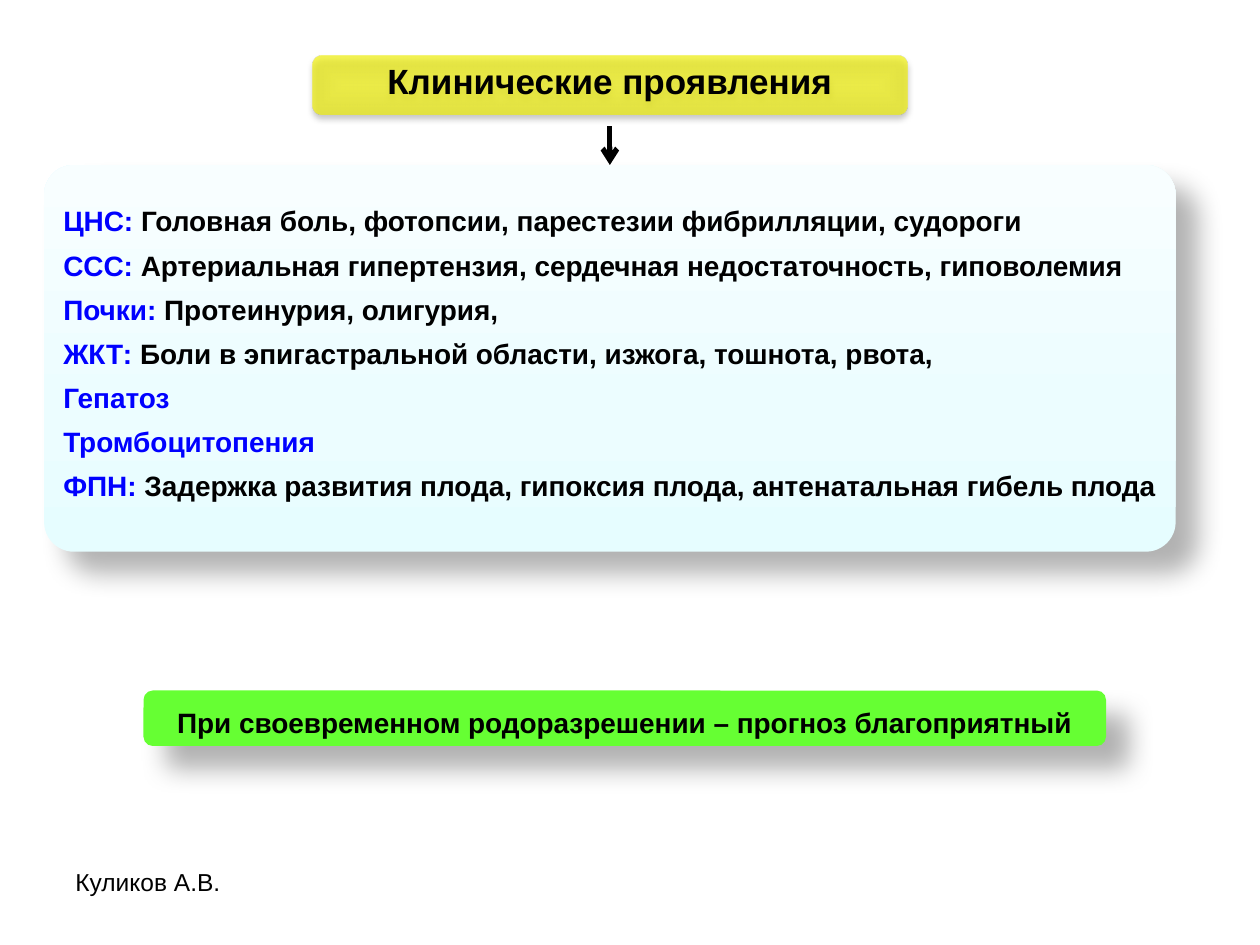
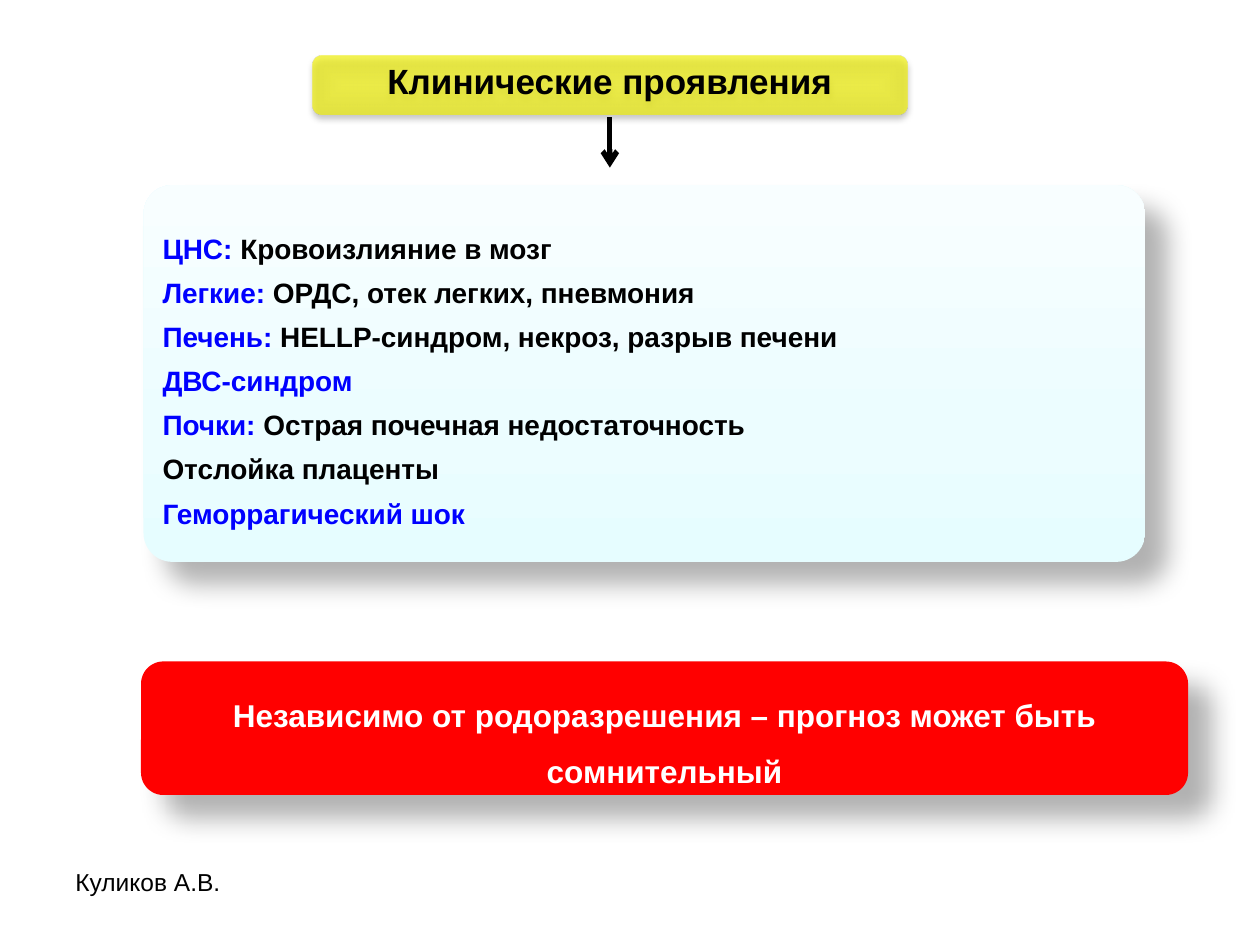
from lxml.etree import SubElement
from pptx import Presentation
from pptx.dml.color import RGBColor
from pptx.enum.shapes import MSO_CONNECTOR, MSO_SHAPE
from pptx.enum.text import MSO_ANCHOR, PP_ALIGN
from pptx.oxml.ns import qn
from pptx.util import Pt

BLACK = RGBColor(0x00, 0x00, 0x00)
WHITE = RGBColor(0xFF, 0xFF, 0xFF)
BLUE = RGBColor(0x00, 0x00, 0xFF)
GREEN = RGBColor(0x66, 0xFF, 0x33)
RED = RGBColor(0xFF, 0x00, 0x00)
YELLOW = RGBColor(0xFF, 0xFF, 0x00)
DARK_YELLOW = RGBColor(0xEF, 0xEF, 0x00)
ICE_DEEP = RGBColor(0xE6, 0xFD, 0xFF)
ICE_MIDDLE = RGBColor(0xEC, 0xFD, 0xFF)
ICE_PALE = RGBColor(0xF8, 0xFE, 0xFF)

FONT = "Arial"
CENTRE_X = 348.5  # shared axis of the title and the arrow

# Gradient stops: position %, colour, opacity %
TITLE_STOPS = [(0, YELLOW, 64), (100, DARK_YELLOW, 67)]
PANEL_STOPS = [(0, ICE_DEEP, 100), (35, ICE_MIDDLE, 100), (100, ICE_PALE, 100)]

# Shadows: opacity %, blur, distance, angle
TITLE_SHADOW = (32, 3.5, 2.2, 90)
DEEP_SHADOW = (30, 15, 18, 45)

# Panel lines: blue label, black findings
EARLY_SIGNS = [
    ("ЦНС:", " Головная боль, фотопсии, парестезии фибрилляции, судороги"),
    ("ССС:", " Артериальная гипертензия, сердечная недостаточность, гиповолемия"),
    ("Почки:", " Протеинурия, олигурия,"),
    ("ЖКТ:", " Боли в эпигастральной области, изжога, тошнота, рвота,"),
    ("Гепатоз", ""),
    ("Тромбоцитопения", ""),
    ("ФПН:", " Задержка развития плода, гипоксия плода, антенатальная гибель плода"),
]
LATE_SIGNS = [
    ("ЦНС:", " Кровоизлияние в мозг"),
    ("Легкие:", " ОРДС, отек легких, пневмония"),
    ("Печень:", " HELLP-синдром, некроз, разрыв печени"),
    ("ДВС-синдром", ""),
    ("Почки:", " Острая почечная недостаточность"),
    ("", "Отслойка плаценты"),
    ("Геморрагический шок", ""),
]


def set_all(target, values):
    for name, value in values.items():
        setattr(target, name, value)


def add_element(parent, tag, **attributes):
    return SubElement(parent, qn(tag), {key: str(value) for key, value in attributes.items()})


def add_colour(parent, colour, opacity):
    node = add_element(parent, "a:srgbClr", val=colour)
    if opacity < 100:
        add_element(node, "a:alpha", val=opacity * 1000)


def add_shadow(shape, opacity, blur, distance, angle):
    shape.shadow.inherit = False
    effects = shape._element.spPr.find(qn("a:effectLst"))
    shadow = add_element(effects, "a:outerShdw", blurRad=Pt(blur), dist=Pt(distance),
                         dir=angle * 60000, rotWithShape=0)
    add_colour(shadow, BLACK, opacity)


def add_gradient(shape, stops, angle=None):
    """Linear at the given angle, or spreading from the centre without one."""
    properties = shape._element.spPr
    gradient = add_element(properties, "a:gradFill", rotWithShape=1)
    stop_list = add_element(gradient, "a:gsLst")
    for position, colour, opacity in stops:
        add_colour(add_element(stop_list, "a:gs", pos=position * 1000), colour, opacity)
    if angle is None:
        spread = add_element(gradient, "a:path", path="shape")
        add_element(spread, "a:fillToRect", l=50000, t=50000, r=50000, b=50000)
    else:
        add_element(gradient, "a:lin", ang=angle * 60000, scaled=1)
    properties.find(qn("a:prstGeom")).addnext(gradient)


def add_span(para, text, size, colour, bold=True):
    span = para.add_run()
    span.text = text
    set_all(span.font, {"name": FONT, "size": Pt(size), "bold": bold})
    span.font.color.rgb = colour


def add_card(page, bounds, corner, shadow, frame_format):
    card = page.shapes.add_shape(MSO_SHAPE.ROUNDED_RECTANGLE, *map(Pt, bounds))
    card.adjustments[0] = corner
    card.line.fill.background()
    add_shadow(card, *shadow)
    set_all(card.text_frame, {"word_wrap": True, **frame_format})
    return card


def add_title(page):
    title = add_card(page, (178.5, 31.7, 340, 33.8), 0.167, TITLE_SHADOW,
                     {"vertical_anchor": MSO_ANCHOR.MIDDLE, "margin_bottom": Pt(8.6)})
    add_gradient(title, TITLE_STOPS)
    para = title.text_frame.paragraphs[0]
    para.alignment = PP_ALIGN.CENTER
    add_span(para, "Клинические проявления", 20, BLACK)


def add_panel(page, bounds, signs, margins):
    panel = add_card(page, bounds, 0.077, DEEP_SHADOW,
                     {"vertical_anchor": MSO_ANCHOR.MIDDLE, "margin_left": Pt(6),
                      "margin_right": 0, **margins})
    add_gradient(panel, PANEL_STOPS, 270)
    frame = panel.text_frame
    for index, (label, findings) in enumerate(signs):
        para = frame.add_paragraph() if index else frame.paragraphs[0]
        set_all(para, {"alignment": PP_ALIGN.LEFT, "space_before": Pt(6 if index else 0)})
        for text, colour in ((label, BLUE), (findings, BLACK)):
            if text:
                add_span(para, text, 16, colour)
    return panel


def add_arrow(page, top, bottom):
    arrow = page.shapes.add_connector(MSO_CONNECTOR.STRAIGHT, Pt(CENTRE_X), Pt(top),
                                      Pt(CENTRE_X), Pt(bottom))
    arrow.line.width = Pt(3)
    arrow.line.color.rgb = BLACK
    add_element(arrow.line._get_or_add_ln(), "a:tailEnd", type="arrow")
    add_element(arrow._element.spPr, "a:effectLst")
    return arrow


def add_prognosis(page, bounds, text, fill, colour, size, spacing):
    banner = add_card(page, bounds, 0.167, DEEP_SHADOW,
                      {"vertical_anchor": MSO_ANCHOR.TOP, "margin_top": Pt(5)})
    banner.fill.solid()
    banner.fill.fore_color.rgb = fill
    para = banner.text_frame.paragraphs[0]
    set_all(para, {"alignment": PP_ALIGN.CENTER, "line_spacing": spacing})
    add_span(para, text, size, colour)


def add_footer(page):
    box = page.shapes.add_textbox(Pt(36), Pt(491.8), Pt(168), Pt(37.4))
    box.text_frame.word_wrap = True
    add_span(box.text_frame.paragraphs[0], "Куликов А.В.", 14, BLACK, bold=False)


def add_page(deck):
    page = deck.slides.add_slide(deck.slide_layouts[6])
    add_footer(page)
    add_title(page)
    return page


def main():
    deck = Presentation()
    set_all(deck, {"slide_width": Pt(720), "slide_height": Pt(540)})

    # Early signs, favourable prognosis
    page = add_page(deck)
    panel = add_panel(page, (25.2, 94.3, 646.6, 221), EARLY_SIGNS, {"margin_bottom": Pt(9.6)})
    add_arrow(page, 72, 94.3).end_connect(panel, 0)
    add_prognosis(page, (82, 394.6, 550, 31.7),
                  "При своевременном родоразрешении – прогноз благоприятный",
                  GREEN, BLACK, 16, 1.1)

    # Late signs, doubtful prognosis
    page = add_page(deck)
    add_panel(page, (82, 105.8, 572.4, 215.3), LATE_SIGNS, {"margin_top": Pt(11.6)})
    add_arrow(page, 67, 95.8)
    add_prognosis(page, (80.6, 378, 598.3, 76.3),
                  "Независимо от родоразрешения – прогноз может быть сомнительный",
                  RED, WHITE, 18, 1.5)

    deck.save("out.pptx")


if __name__ == "__main__":
    main()
